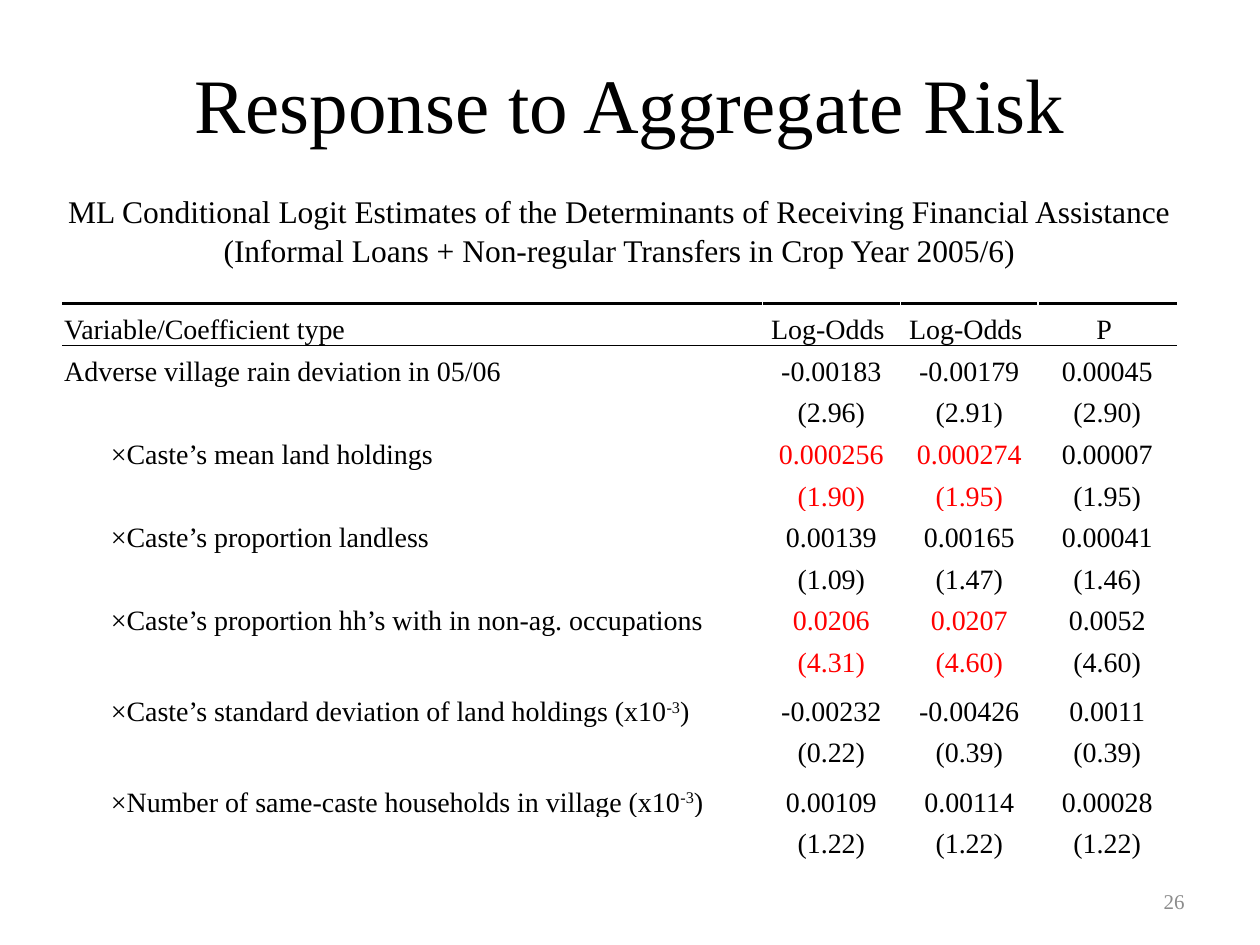
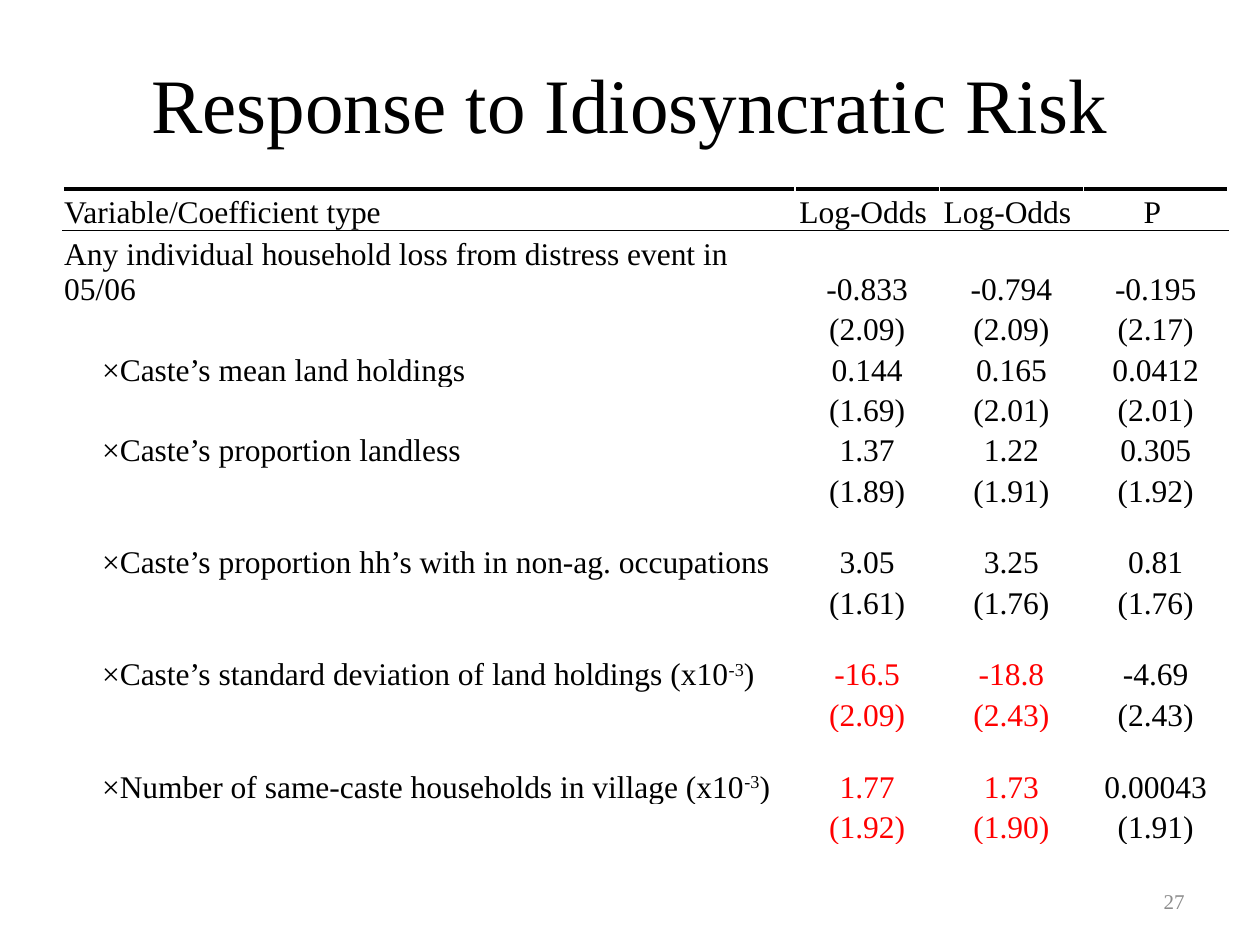
from dataclasses import dataclass

import lxml.etree
import pptx
import pptx.dml.color
import pptx.enum.text
import pptx.oxml.ns
import pptx.util

ALIGN = pptx.enum.text.PP_ALIGN
ANCHOR = pptx.enum.text.MSO_ANCHOR


@dataclass(frozen=True)
class Theme:
    font: str = "Times New Roman"
    ink: str = "000000"
    highlight: str = "FF0000"
    muted: str = "8C8C8C"
    paper: str = "FFFFFF"
    title_size: int = 44
    caption_size: int = 18
    number_size: int = 12
    heavy_rule: float = 2
    thin_rule: float = 0.5


@dataclass(frozen=True)
class TableLayout:
    """Widths and heights in grid units, text size in points."""
    label_width: float
    value_width: float
    indent: float
    plain_row: float
    header_row: float
    size: int


@dataclass(frozen=True)
class Estimate:
    """One variable: a row of coefficients above a row of t-values."""
    label: str
    coefficients: tuple
    t_values: tuple
    highlighted: bool = False
    row_height: float = 0


HEADINGS = ("Variable/Coefficient type", "Log-Odds ", "Log-Odds ", "P ")
LAND = "×Caste’s mean land holdings"
LANDLESS = "×Caste’s proportion landless"
OCCUPATIONS = "×Caste’s proportion hh’s with in non-ag. occupations"
# Text between carets is superscript
DEVIATION = "×Caste’s standard deviation of land holdings (x10^-3^)"
HOUSEHOLDS = "×Number of same-caste households in village (x10^-3^)"

# Aggregate risk
AGGREGATE_LAYOUT = TableLayout(11.1, 2.19, 0.76, 0.66, 0.68, 16)
AGGREGATE_CAPTIONS = (
    # text, row height, space below the text
    ("ML Conditional Logit Estimates of the Determinants of Receiving Financial Assistance", 0.66, 0),
    ("(Informal Loans + Non-regular Transfers in Crop Year 2005/6)", 1.12, 0.53),
)
AGGREGATE_ESTIMATES = (
    Estimate("Adverse village rain deviation in 05/06",
             ("-0.00183", "-0.00179", "0.00045"), ("(2.96)", "(2.91)", "(2.90)")),
    Estimate(LAND, ("0.000256", "0.000274", "0.00007"), ("(1.90)", "(1.95)", "(1.95)"), True),
    Estimate(LANDLESS, ("0.00139", "0.00165", "0.00041"), ("(1.09)", "(1.47)", "(1.46)")),
    Estimate(OCCUPATIONS, ("0.0206", "0.0207", "0.0052"), ("(4.31)", "(4.60)", "(4.60)"), True),
    Estimate(DEVIATION, ("-0.00232", "-0.00426", "0.0011"), ("(0.22)", "(0.39)", "(0.39)"),
             row_height=0.78),
    Estimate(HOUSEHOLDS, ("0.00109", "0.00114", "0.00028"), ("(1.22)", "(1.22)", "(1.22)"),
             row_height=0.78),
)

# Idiosyncratic risk
TALL_ROW = 1.14
IDIOSYNCRATIC_LAYOUT = TableLayout(11.62, 2.29, 0.62, 0.64, 0.66, 18)
IDIOSYNCRATIC_ESTIMATES = (
    Estimate("Any individual household loss from distress event in 05/06",
             ("-0.833", "-0.794", "-0.195"), ("(2.09)", "(2.09)", "(2.17)"), row_height=TALL_ROW),
    Estimate(LAND, ("0.144", "0.165", "0.0412"), ("(1.69)", "(2.01)", "(2.01)")),
    Estimate(LANDLESS, ("1.37", "1.22", "0.305"), ("(1.89)", "(1.91)", "(1.92)")),
    Estimate(OCCUPATIONS, ("3.05", "3.25", "0.81"), ("(1.61)", "(1.76)", "(1.76)"),
             row_height=TALL_ROW),
    Estimate(DEVIATION, ("-16.5", "-18.8", "-4.69"), ("(2.09)", "(2.43)", "(2.43)"),
             True, TALL_ROW),
    Estimate(HOUSEHOLDS, ("1.77", "1.73", "0.00043"), ("(1.92)", "(1.90)", "(1.91)"),
             True, TALL_ROW),
)


class Deck:
    """Holds the theme and the current slide; lengths are units of a 20 by 15 grid."""
    columns, rows = 20, 15
    cell_margin = 0.02

    def __init__(self, theme):
        self.theme = theme
        self.presentation = pptx.Presentation()
        self.presentation.slide_width = pptx.util.Inches(10)
        self.presentation.slide_height = pptx.util.Inches(7.5)
        self.slide = None

    def across(self, count):
        return pptx.util.Emu(round(self.presentation.slide_width * count / self.columns))

    def down(self, count):
        return pptx.util.Emu(round(self.presentation.slide_height * count / self.rows))

    def start_slide(self, title, number):
        self.slide = self.presentation.slides.add_slide(self.presentation.slide_layouts[6])
        self.text_box((1, 0.6, 18, 2.06), title, self.theme.title_size,
                      self.theme.ink, ALIGN.CENTER)
        self.text_box((14.34, 13.9, 4.66, 0.8), str(number), self.theme.number_size,
                      self.theme.muted, ALIGN.RIGHT)

    def add_text(self, paragraph, text, size, color, alignment):
        paragraph.alignment = alignment
        for index, part in enumerate(text.split("^")):
            run = paragraph.add_run()
            run.text = part
            run.font.name = self.theme.font
            run.font.size = pptx.util.Pt(size)
            run.font.color.rgb = pptx.dml.color.RGBColor.from_string(color)
            if index % 2:
                run.font._element.set("baseline", "30000")

    def text_box(self, place, text, size, color, alignment):
        left, top, width, height = place
        shape = self.slide.shapes.add_textbox(
            self.across(left), self.down(top), self.across(width), self.down(height))
        shape.text_frame.word_wrap = True
        shape.text_frame.vertical_anchor = ANCHOR.MIDDLE
        self.add_text(shape.text_frame.paragraphs[0], text, size, color, alignment)

    def rule(self, cell, edge, points):
        """Draw a border; edge is lnT or lnB, and lnT has to be drawn first."""
        properties = cell._tc.get_or_add_tcPr()
        line = lxml.etree.Element(pptx.oxml.ns.qn(f"a:{edge}"), w=str(pptx.util.Pt(points)))
        fill = lxml.etree.SubElement(line, pptx.oxml.ns.qn("a:solidFill"))
        lxml.etree.SubElement(fill, pptx.oxml.ns.qn("a:srgbClr"), val=self.theme.ink)
        position = sum(child.tag == pptx.oxml.ns.qn("a:lnT") for child in properties)
        properties.insert(position, line)

    def fill_cell(self, cell, text, size, color, alignment, indent=cell_margin, below=0):
        cell.margin_left = self.across(indent)
        cell.margin_right = self.across(self.cell_margin)
        cell.margin_top = self.down(self.cell_margin)
        cell.margin_bottom = self.down(below)
        cell.vertical_anchor = ANCHOR.BOTTOM
        cell.fill.solid()
        cell.fill.fore_color.rgb = pptx.dml.color.RGBColor.from_string(self.theme.paper)
        if text:
            self.add_text(cell.text_frame.paragraphs[0], text, size, color, alignment)

    def estimate_table(self, layout, estimates, captions=()):
        theme = self.theme
        header = len(captions)
        widths = [layout.label_width] + [layout.value_width] * 3
        heights = [height for _, height, _ in captions] + [layout.header_row]
        for estimate in estimates:
            heights += [estimate.row_height or layout.plain_row, layout.plain_row]

        frame = self.slide.shapes.add_table(
            len(heights), len(widths), self.across(1), self.down(3),
            self.across(sum(widths)), self.down(sum(heights)))
        table = frame.table
        table.first_row = table.horz_banding = False
        for column, width in zip(table.columns, widths):
            column.width = self.across(width)
        for row, height in zip(table.rows, heights):
            row.height = self.down(height)

        # Captions across the whole table
        for index, (caption, _, below) in enumerate(captions):
            for cell, text in zip(table.rows[index].cells, (caption, "", "", "")):
                self.fill_cell(cell, text, theme.caption_size, theme.ink, ALIGN.CENTER, below=below)
                if index == header - 1:
                    self.rule(cell, "lnB", theme.heavy_rule)
            table.cell(index, 0).merge(table.cell(index, len(widths) - 1))

        # Headings and estimates
        body = [(HEADINGS, False)]
        for estimate in estimates:
            body.append(((estimate.label, *estimate.coefficients), estimate.highlighted))
            body.append((("", *estimate.t_values), estimate.highlighted))
        for row, (texts, highlighted) in enumerate(body, header):
            for column, text in enumerate(texts):
                cell = table.cell(row, column)
                color = theme.highlight if highlighted and column in (1, 2) else theme.ink
                indent = layout.indent if text.startswith("×") else self.cell_margin
                self.fill_cell(cell, text, layout.size, color,
                               ALIGN.CENTER if column else ALIGN.LEFT, indent)
                if row == header:
                    self.rule(cell, "lnT", theme.heavy_rule)
                    self.rule(cell, "lnB", theme.thin_rule)
                elif row == header + 1:
                    self.rule(cell, "lnT", theme.thin_rule)


def main():
    deck = Deck(Theme())

    deck.start_slide("Response to Aggregate Risk", 26)
    deck.estimate_table(AGGREGATE_LAYOUT, AGGREGATE_ESTIMATES, AGGREGATE_CAPTIONS)

    deck.start_slide("Response to Idiosyncratic Risk", 27)
    deck.estimate_table(IDIOSYNCRATIC_LAYOUT, IDIOSYNCRATIC_ESTIMATES)

    deck.presentation.save("out.pptx")


if __name__ == "__main__":
    main()
